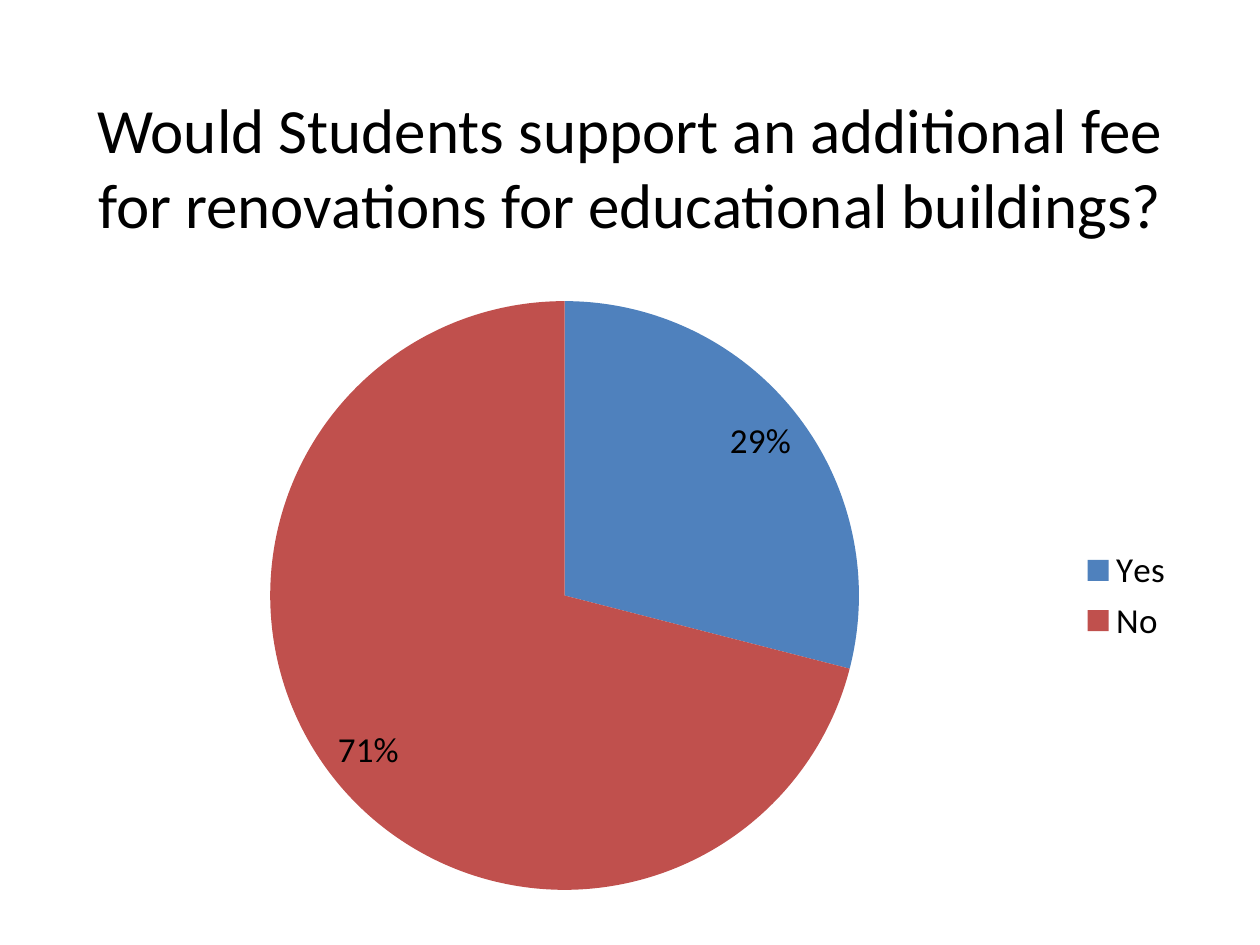
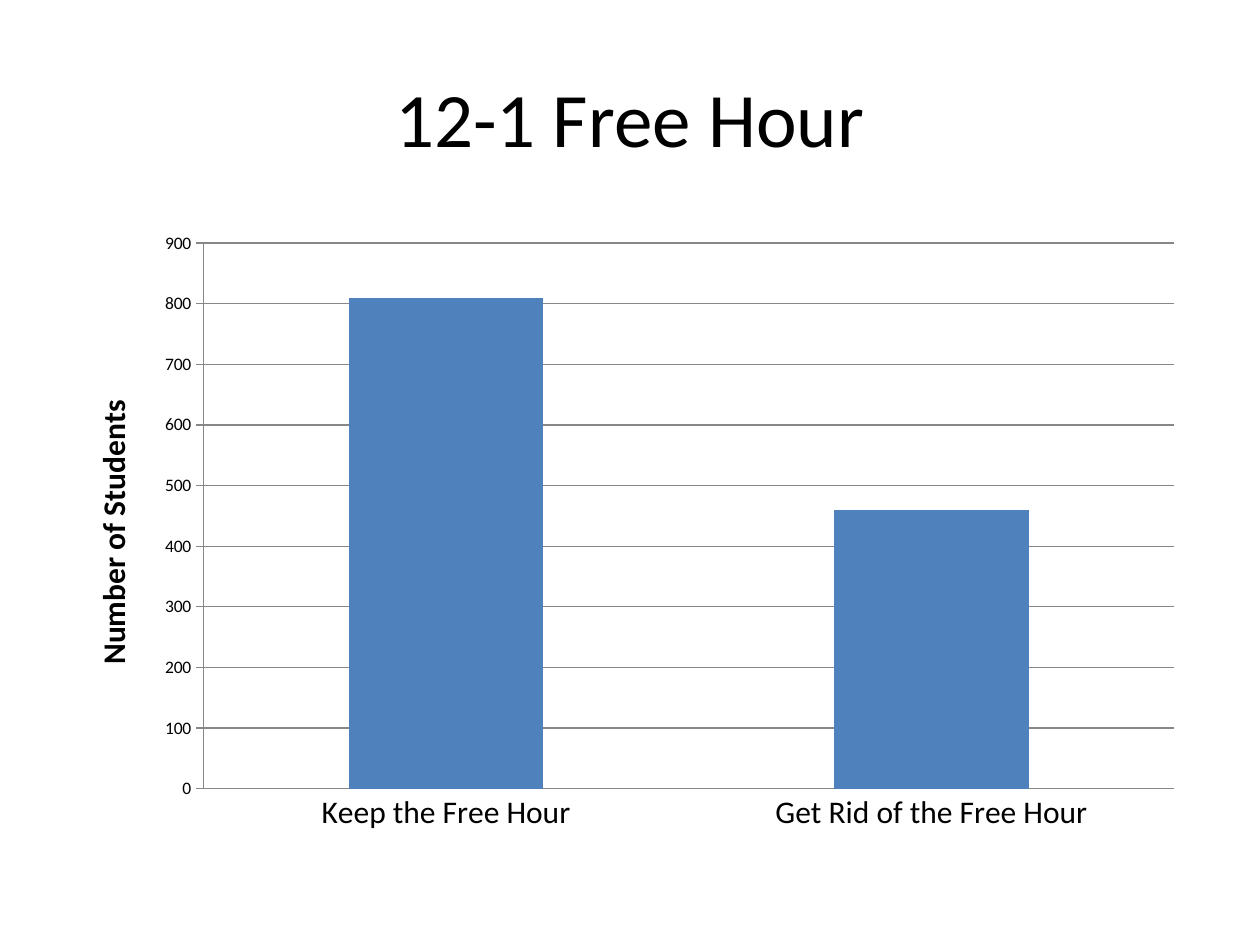
from pptx import Presentation
from pptx import util as u
from pptx.chart.data import CategoryChartData
from pptx.dml.color import RGBColor
from pptx.enum import chart as ch, text

FONT = "Calibri"
COLORS = {"text": "000000", "blue": "4F81BD", "red": "C0504D", "axis": "878787"}
LEFT, TOP, WIDTH = 1.27, 0.76, 22.86
CHART_HEIGHT = 12.57


def rgb(name):
    return RGBColor.from_string(COLORS[name])


def set_font(font, size, bold=False):
    for key, value in {"name": FONT, "size": u.Pt(size), "bold": bold}.items():
        setattr(font, key, value)
    font.color.rgb = rgb("text")


def set_fill(part, color):
    part.format.fill.solid()
    part.format.fill.fore_color.rgb = rgb(color)


def set_line(part):
    part.format.line.color.rgb = rgb("axis")
    part.format.line.width = u.Pt(0.75)


def add_title(s, words, height, size):
    box = s.shapes.add_textbox(*map(u.Cm, (LEFT, TOP, WIDTH, height)))
    tf = box.text_frame
    tf.word_wrap = True
    tf.vertical_anchor = text.MSO_ANCHOR.MIDDLE
    p = tf.paragraphs[0]
    p.alignment = text.PP_ALIGN.CENTER
    r = p.add_run()
    r.text = words
    set_font(r.font, size)


def add_chart(s, kind, left, top, values):
    """Add a one-series chart from a dict of category to value."""
    data = CategoryChartData()
    data.categories = list(values)
    data.add_series("Series 1", list(values.values()))
    frame = s.shapes.add_chart(
        kind, *map(u.Cm, (left, top, WIDTH, CHART_HEIGHT)), data)
    chart = frame.chart
    chart.has_title = False
    chart.has_legend = False
    set_font(chart.font, 10)
    return chart


def add_pie(s, left, top, values, colors):
    chart = add_chart(s, ch.XL_CHART_TYPE.PIE, left, top, values)
    plot = chart.plots[0]
    for i, color in enumerate(colors):
        set_fill(plot.series[0].points[i], color)
    plot.has_data_labels = True
    labels = plot.data_labels
    formats = {"show_percentage": True, "show_value": False,
               "number_format": "0%", "number_format_is_linked": False,
               "position": ch.XL_LABEL_POSITION.INSIDE_END}
    for key, value in formats.items():
        setattr(labels, key, value)
    set_font(labels.font, 20)
    chart.has_legend = True
    chart.legend.position = ch.XL_LEGEND_POSITION.RIGHT
    chart.legend.include_in_layout = False
    set_font(chart.legend.font, 20)


def add_columns(s, left, top, values, color, axis_title):
    chart = add_chart(s, ch.XL_CHART_TYPE.COLUMN_CLUSTERED, left, top, values)
    plot = chart.plots[0]
    plot.gap_width = 150
    plot.vary_by_categories = False
    set_fill(plot.series[0], color)

    cat_axis, val_axis = chart.category_axis, chart.value_axis
    cat_axis.major_tick_mark = ch.XL_TICK_MARK.NONE
    set_font(cat_axis.tick_labels.font, 18)
    val_axis.major_tick_mark = ch.XL_TICK_MARK.CROSS
    val_axis.has_major_gridlines = True
    for part in (cat_axis, val_axis, val_axis.major_gridlines):
        set_line(part)
    set_font(val_axis.tick_labels.font, 10)
    for key, value in {"minimum_scale": 0, "maximum_scale": 900, "major_unit": 100}.items():
        setattr(val_axis, key, value)
    p = val_axis.axis_title.text_frame.paragraphs[0]
    r = p.add_run()
    r.text = axis_title
    set_font(r.font, 18, bold=True)


def main():
    prs = Presentation()
    prs.slide_width, prs.slide_height = u.Cm(25.4), u.Cm(19.05)
    blank = prs.slide_layouts[6]

    s = prs.slides.add_slide(blank)
    add_title(s, "Would Students support an additional fee for renovations "
                 "for educational buildings?", 5.16, 36)
    add_pie(s, 1.07, 5.72, {"Yes": 29, "No": 71}, ("blue", "red"))

    s = prs.slides.add_slide(blank)
    add_title(s, "12-1 Free Hour", 3.18, 44)
    add_columns(s, LEFT, 4.45,
                {"Keep the Free Hour": 810, "Get Rid of the Free Hour": 460},
                "blue", "Number of Students")

    prs.save("out.pptx")


if __name__ == "__main__":
    main()
